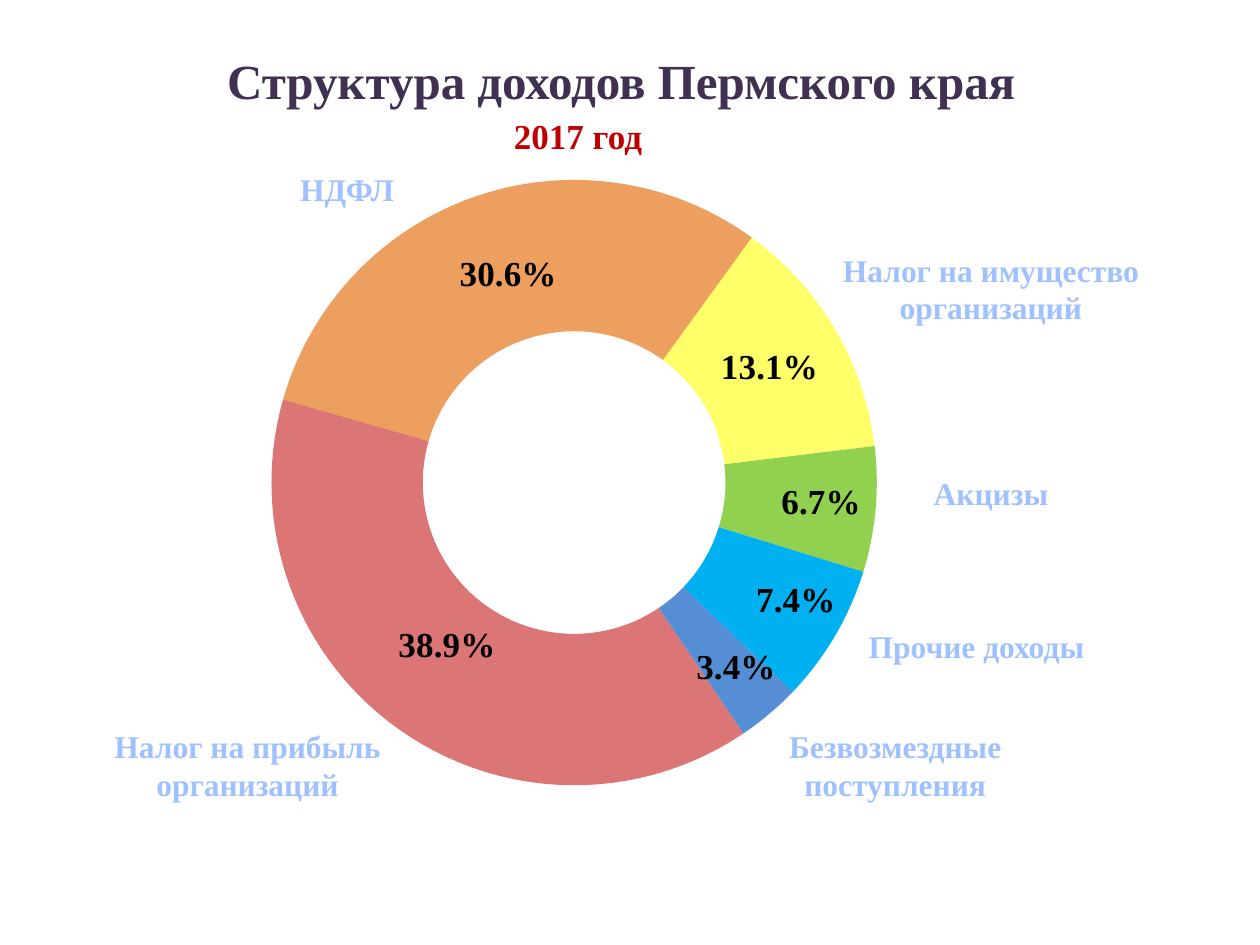
from lxml.etree import SubElement
from pptx import Presentation
from pptx.chart.data import CategoryChartData
from pptx.dml.color import RGBColor
from pptx.enum.chart import XL_CHART_TYPE
from pptx.enum.text import MSO_ANCHOR, PP_ALIGN
from pptx.oxml import parse_xml
from pptx.oxml.ns import nsdecls, qn
from pptx.util import Inches, Pt

FONT = "Times New Roman"
BLACK = RGBColor(0, 0, 0)
PURPLE = RGBColor(0x40, 0x31, 0x52)
RED = RGBColor(0xC0, 0x00, 0x00)
ORANGE = RGBColor(0xE4, 0x6C, 0x0A)
YELLOW = RGBColor(0xFF, 0xFF, 0x00)
GREEN = RGBColor(0x92, 0xD0, 0x50)
CYAN = RGBColor(0x00, 0xB0, 0xF0)
BLUE = RGBColor(0x55, 0x8E, 0xD5)
PALE_BLUE = RGBColor(0xA0, 0xC1, 0xFF)

TITLE = "Структура доходов Пермского края"
YEAR = "2017 год"

# Share, colour, opacity in percent, shift of the value label (shares of the chart)
SLICES = [
    (0.389, RED, 54, (0.006, -0.03)),
    (0.306, ORANGE, 65, (0.008, 0.01)),
    (0.131, YELLOW, 59, None),
    (0.067, GREEN, 100, (0.02, 0)),
    (0.074, CYAN, 100, (0.025, 0.004)),
    (0.034, BLUE, 100, (0.015, 0.016)),
]

# Name, left, top, width, height in inches
CAPTIONS = [
    ("Безвозмездные поступления", 5.65, 5.72, 2.91, 0.71),
    ("НДФЛ", 1.3, 1.3, 2.91, 0.4),
    ("Налог на имущество организаций", 6.41, 1.94, 2.91, 0.71),
    ("Акцизы", 6.41, 3.71, 2.91, 0.4),
    ("Налог на прибыль организаций", 0.51, 5.72, 2.91, 0.71),
    ("Прочие доходы", 6.43, 4.93, 2.64, 0.4),
]


def style(font, size, color):
    font.name, font.size, font.bold = FONT, Pt(size), True
    font.color.rgb = color


def add_text(page, text, place, size, color,
             align=PP_ALIGN.CENTER, anchor=MSO_ANCHOR.TOP):
    box = page.shapes.add_textbox(*map(Inches, place))
    frame = box.text_frame
    frame.word_wrap = True
    frame.vertical_anchor = anchor
    paragraph = frame.paragraphs[0]
    paragraph.text = text
    paragraph.alignment = align
    style(paragraph.font, size, color)


def manual_layout(**settings):
    parts = "".join(f'<c:{name} val="{value}"/>' for name, value in settings.items())
    return parse_xml(f'<c:layout {nsdecls("c")}><c:manualLayout>{parts}'
                     '</c:manualLayout></c:layout>')


def add_doughnut(page):
    data = CategoryChartData(number_format="0.0%")
    data.categories = [str(number + 1) for number in range(len(SLICES))]
    data.add_series("Series 1", [part[0] for part in SLICES])
    chart = page.shapes.add_chart(
        XL_CHART_TYPE.DOUGHNUT, Inches(1.66), Inches(0.85),
        Inches(8.35), Inches(5.51), data).chart
    chart.has_title = False
    chart.has_legend = False
    chart.font.name, chart.font.size = "Calibri", Pt(18)

    # Value labels
    plot = chart.plots[0]
    plot.vary_by_categories = True
    plot.has_data_labels = True
    series = plot.series[0]
    labels = series.data_labels
    labels.show_value = True
    labels.show_percentage = False
    labels.number_format = "0.0%"
    labels.number_format_is_linked = False
    style(labels.font, 20, BLACK)

    # Slice colours and label fonts
    for index, (_, color, opacity, shift) in enumerate(SLICES):
        point = series.points[index]
        point.format.line.fill.background()
        point.format.fill.solid()
        point.format.fill.fore_color.rgb = color
        if shift:
            style(point.data_label.font, 20, BLACK)

    # Opacity, label shifts, ring and plot position
    root = chart.element
    for index, (_, _, opacity, shift) in enumerate(SLICES):
        if opacity < 100:
            tint = root.xpath(f".//c:dPt[c:idx/@val='{index}']/c:spPr/a:solidFill/a:srgbClr")[0]
            SubElement(tint, qn("a:alpha")).set("val", str(opacity * 1000))
        if shift:
            number = root.xpath(f".//c:dLbl/c:idx[@val='{index}']")[0]
            number.addnext(manual_layout(x=shift[0], y=shift[1]))
    for tag, value in (("firstSliceAng", 146), ("holeSize", 41)):
        root.xpath(f".//c:{tag}")[0].set("val", str(value))
    area = root.xpath(".//c:plotArea")[0]
    for old in area.findall(qn("c:layout")):
        area.remove(old)
    area.insert(0, manual_layout(layoutTarget="inner", xMode="edge", yMode="edge",
                                 x=0.059, y=0.105, w=0.576, h=0.872))


def main():
    deck = Presentation()
    deck.slide_width, deck.slide_height = Inches(10), Inches(7.5)
    page = deck.slides.add_slide(deck.slide_layouts[6])
    add_text(page, TITLE, (0.43, 0.01, 9, 1.25), 28, PURPLE, anchor=MSO_ANCHOR.MIDDLE)
    add_doughnut(page)
    for name, *place in CAPTIONS:
        add_text(page, name, place, 18, PALE_BLUE)
    add_text(page, YEAR, (3.98, 0.86, 1.5, 0.44), 20, RED, align=PP_ALIGN.LEFT)
    deck.save("out.pptx")


if __name__ == "__main__":
    main()
